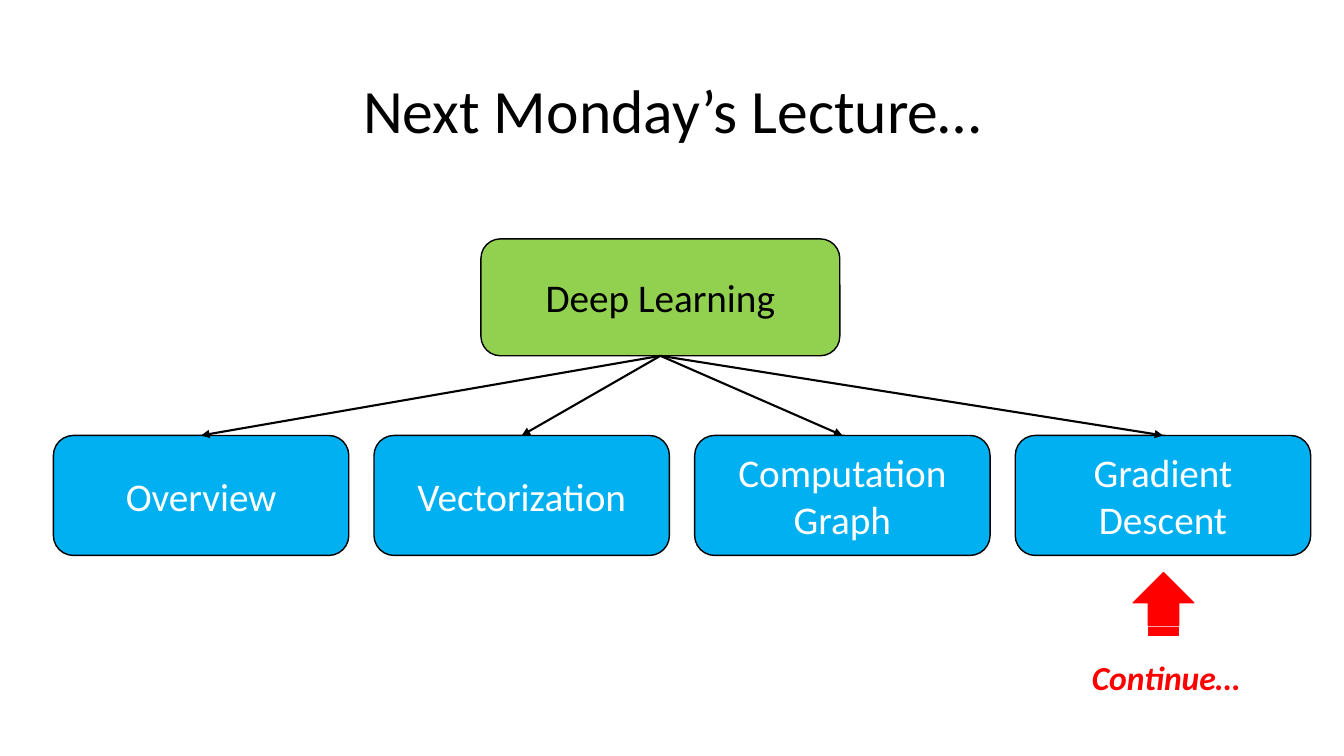
from pptx import Presentation
from pptx.dml.color import RGBColor
from pptx.enum.shapes import MSO_CONNECTOR, MSO_SHAPE
from pptx.enum.text import MSO_ANCHOR, PP_ALIGN
from pptx.oxml.ns import qn
from pptx.util import Pt
from lxml.etree import SubElement

PX = 9144
BLACK, WHITE, RED, GREEN, BLUE = "000000", "FFFFFF", "FF0000", "92D050", "00B0F0"
TOPICS = ["Overview", "Vectorization", "Computation Graph", "Gradient Descent"]
TOPIC_LEFT, TOPIC_TOP, TOPIC_WIDTH, TOPIC_HEIGHT, TOPIC_STEP = 53, 432, 293, 119, 318
ROOT_LEFT, ROOT_TOP, ROOT_WIDTH, ROOT_HEIGHT = 477, 237, 356, 116


def px(*lengths):
    """Turn px lengths into EMU."""
    return [round(length * PX) for length in lengths]


def paint(color_format, color):
    """Set a colour from a hex string."""
    color_format.rgb = RGBColor.from_string(color)


def write(shape, text, size, color, align=PP_ALIGN.CENTER, bold=False):
    """Put one formatted paragraph into a shape and return it."""
    frame = shape.text_frame
    frame.text = text
    paragraph = frame.paragraphs[0]
    paragraph.alignment = align
    font = paragraph.runs[0].font
    font.name, font.size = "Calibri", Pt(size)
    font.bold = font.italic = bold
    paint(font.color, color)
    return paragraph


def add_figure(slide, kind, box, fill, line):
    """Add a filled preset shape with a thin outline."""
    shape = slide.shapes.add_shape(kind, *px(*box))
    shape.shadow.inherit = False
    shape.fill.solid()
    paint(shape.fill.fore_color, fill)
    shape.line.width = Pt(1)
    paint(shape.line.color, line)
    return shape


def add_node(slide, text, box, fill, color):
    """Add a rounded box with a centred label."""
    shape = add_figure(slide, MSO_SHAPE.ROUNDED_RECTANGLE, box, fill, BLACK)
    shape.text_frame.word_wrap = True
    shape.text_frame.vertical_anchor = MSO_ANCHOR.MIDDLE
    write(shape, text, 28, color)


def add_arrow(slide, start, end):
    """Add a straight line with a triangle at its end."""
    connector = slide.shapes.add_connector(MSO_CONNECTOR.STRAIGHT, *px(*start, *end))
    connector.line.width = Pt(1.5)
    paint(connector.line.color, BLACK)
    SubElement(connector.line._get_or_add_ln(), qn("a:tailEnd"), type="triangle")
    SubElement(connector._element.spPr, qn("a:effectLst"))


def add_title(slide, text):
    """Add the centred slide title."""
    title = slide.shapes.add_textbox(*px(92, 40, 1150, 145))
    title.text_frame.word_wrap = True
    title.text_frame.vertical_anchor = MSO_ANCHOR.MIDDLE
    write(title, text, 44, BLACK).line_spacing = 0.9


def add_marker(slide, text):
    """Add the upward striped arrow and its caption."""
    box = (1123, 569, 62, 60)
    arrow = add_figure(slide, MSO_SHAPE.STRIPED_RIGHT_ARROW, box, RED, RED)
    arrow.rotation = 270
    caption = slide.shapes.add_textbox(*px(1073, 647, 169, 50))
    caption.text_frame.word_wrap = False
    write(caption, text, 24, RED, PP_ALIGN.LEFT, bold=True)


def main():
    """Build the slide and save it."""
    presentation = Presentation()
    presentation.slide_width, presentation.slide_height = px(1333, 750)
    slide = presentation.slides.add_slide(presentation.slide_layouts[6])
    add_title(slide, "Next Monday’s Lecture…")
    root = (ROOT_LEFT, ROOT_TOP, ROOT_WIDTH, ROOT_HEIGHT)
    add_node(slide, "Deep Learning", root, GREEN, BLACK)
    root_foot = (ROOT_LEFT + ROOT_WIDTH / 2, ROOT_TOP + ROOT_HEIGHT)
    for index, topic in enumerate(TOPICS):
        left = TOPIC_LEFT + index * TOPIC_STEP
        add_node(slide, topic, (left, TOPIC_TOP, TOPIC_WIDTH, TOPIC_HEIGHT), BLUE, WHITE)
        add_arrow(slide, root_foot, (left + TOPIC_WIDTH / 2, TOPIC_TOP))
    add_marker(slide, "Continue…")
    presentation.save("out.pptx")


if __name__ == "__main__":
    main()
